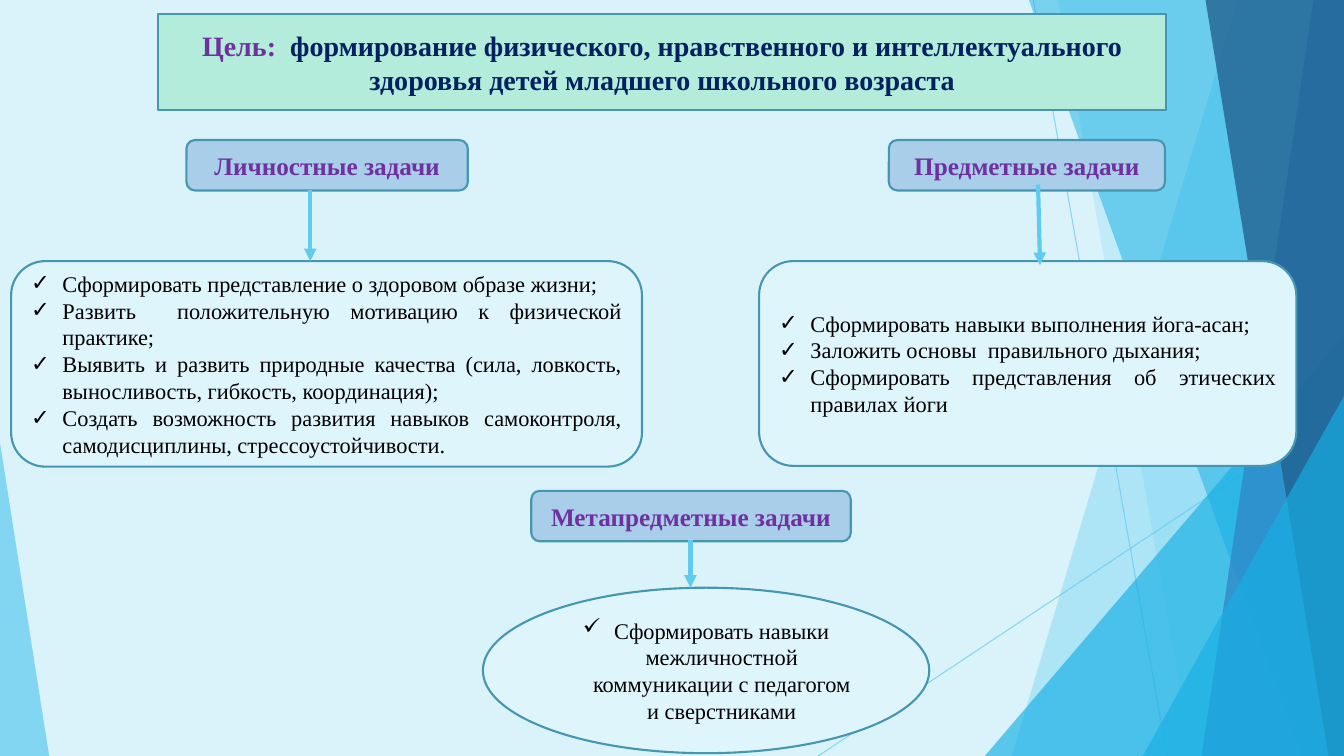
from dataclasses import dataclass
from typing import Optional

from lxml import etree
from pptx import Presentation
from pptx import util as u
from pptx.dml.color import RGBColor
from pptx.enum import shapes, text
from pptx.oxml.ns import qn

WIDTH, HEIGHT = 33.87, 19.05
FONT = "Times New Roman"
PURPLE, NAVY, BLACK, OUTLINE, SKY = "7030A0", "002060", "000000", "4696B1", "5FCBEF"
ROUNDED, OVAL = shapes.MSO_SHAPE.ROUNDED_RECTANGLE, shapes.MSO_SHAPE.OVAL
CENTER, JUSTIFY = text.PP_ALIGN.CENTER, text.PP_ALIGN.JUSTIFY
BULLET_INDENT = 0.79


@dataclass
class Facet:
    """Decorative polygon between a slanted side and a slide edge."""
    top_x: float
    bottom_x: float
    color: str
    opacity: int
    top_y: float = 0
    edge: float = WIDTH


@dataclass
class Line:
    start: tuple[float, float]
    end: tuple[float, float]


@dataclass
class Style:
    fill: str
    size: int
    color: str
    bold: bool = True
    bulleted: bool = False


@dataclass
class Box:
    area: tuple[float, float, float, float]
    style: Style
    lines: list[str]
    placeholder: Optional[int] = None
    alignment: text.PP_ALIGN = CENTER
    kind: shapes.MSO_SHAPE = ROUNDED


GOAL = Style("B3ECDA", 20, PURPLE)
HEADING = Style("A8CEEA", 18, PURPLE)
TASKS = Style("DFF5FC", 16, BLACK, bold=False, bulleted=True)

FACETS = [
    Facet(31.19, 25.5, SKY, 36),
    Facet(26.67, 30.05, SKY, 20),
    Facet(WIDTH, 24.82, "17B0E4", 66, top_y=8.46),
    Facet(25.93, 32.79, "17B0E4", 50),
    Facet(33.1, 30.28, "2E83C3", 70),
    Facet(30.38, 33.48, "226292", 80),
    Facet(WIDTH, 28.8, "17B0E4", 66, top_y=9.98),
    Facet(0, 1.24, SKY, 70, top_y=11.15, edge=0),
]
RAYS = [Line((26.04, 0), (29.41, HEIGHT)), Line((WIDTH, 10.24), (20.62, HEIGHT))]
ARROWS = [
    Line((7.82, 4.8), (7.82, 6.58)),
    Line((26.16, 4.65), (26.21, 6.68)),
    Line((17.4, 13.61), (17.4, 14.81)),
]
GOAL_BOX = Box((3.99, 0.36, 25.4, 2.41), GOAL, ["Цель:  "], 0)
GOAL_TEXT = ("формирование физического, нравственного и интеллектуального "
             "здоровья детей младшего школьного возраста")
BOXES = [
    Box((4.7, 3.53, 7.09, 1.27), HEADING, ["Личностные задачи"], 1),
    Box((13.39, 12.37, 8.05, 1.27), HEADING, ["Метапредметные задачи"]),
    Box((22.4, 3.53, 6.96, 1.27), HEADING, ["Предметные задачи"], 3),
    Box((19.13, 6.58, 13.54, 5.16), TASKS, [
        "Сформировать навыки выполнения йога-асан;",
        "Заложить основы  правильного дыхания;",
        "Сформировать представления об этических правилах йоги",
    ], 4, JUSTIFY),
    Box((12.17, 14.81, 11.25, 4.17), TASKS, [
        "Сформировать навыки межличностной коммуникации с педагогом и сверстниками",
    ], kind=OVAL),
    Box((0.28, 6.58, 15.9, 5.18), TASKS, [
        "Сформировать представление о здоровом образе жизни;",
        "Развить  положительную мотивацию к физической практике;",
        "Выявить и развить природные качества (сила, ловкость, выносливость, "
        "гибкость, координация);",
        "Создать возможность развития навыков самоконтроля, самодисциплины, "
        "стрессоустойчивости.",
    ], 2, JUSTIFY),
]


def paint(color_format, color: str) -> None:
    color_format.rgb = RGBColor.from_string(color)


def set_fill(fill, color: str) -> None:
    fill.solid()
    paint(fill.fore_color, color)


def set_opacity(shape, percent: int) -> None:
    for color in shape.element.spPr.iter(qn("a:srgbClr")):
        etree.SubElement(color, qn("a:alpha"), val=str(percent * 1000))


def draw_facet(slide, facet: Facet) -> None:
    corners = [(facet.top_x, facet.top_y), (facet.edge, facet.top_y),
               (facet.edge, HEIGHT), (facet.bottom_x, HEIGHT)]
    points = [(u.Cm(x), u.Cm(y)) for x, y in corners]
    builder = slide.shapes.build_freeform(*points[0])
    builder.add_line_segments(points[1:])
    shape = builder.convert_to_shape()
    shape.shadow.inherit = False
    set_fill(shape.fill, facet.color)
    shape.line.fill.background()
    set_opacity(shape, facet.opacity)


def draw_line(slide, line: Line, width: float):
    ends = [u.Cm(value) for value in line.start + line.end]
    connector = slide.shapes.add_connector(shapes.MSO_CONNECTOR.STRAIGHT, *ends)
    connector.line.width = u.Pt(width)
    set_fill(connector.line.fill, SKY)
    etree.SubElement(connector.element.spPr, qn("a:effectLst"))
    return connector


def draw_arrow(slide, line: Line) -> None:
    outline = draw_line(slide, line, 3).element.spPr.find(qn("a:ln"))
    etree.SubElement(outline, qn("a:tailEnd"), type="triangle")


def place_box(slide, box: Box):
    area = [u.Cm(value) for value in box.area]
    if box.placeholder is None:
        return slide.shapes.add_shape(box.kind, *area)
    shape = next(item for item in slide.placeholders
                 if item.placeholder_format.idx == box.placeholder)
    shape.left, shape.top, shape.width, shape.height = area
    geometry = etree.SubElement(shape.element.spPr, qn("a:prstGeom"), prst="roundRect")
    etree.SubElement(geometry, qn("a:avLst"))
    shape.element.getparent().append(shape.element)  # bring to front
    return shape


def format_run(run, style: Style, color: str) -> None:
    run.font.name = FONT
    run.font.size = u.Pt(style.size)
    run.font.bold = style.bold
    paint(run.font.color, color)


def format_paragraph(paragraph, box: Box) -> None:
    paragraph.alignment = box.alignment
    paragraph.line_spacing = 1.0
    paragraph.space_before = paragraph.space_after = u.Pt(0)
    properties = paragraph._p.get_or_add_pPr()
    indent = u.Cm(BULLET_INDENT) if box.style.bulleted else 0
    properties.set("marL", str(indent))
    properties.set("indent", str(-indent))
    if box.style.bulleted:
        etree.SubElement(properties, qn("a:buChar"), char="✓")
    else:
        etree.SubElement(properties, qn("a:buNone"))
    for run in paragraph.runs:
        format_run(run, box.style, box.style.color)


def draw_box(slide, box: Box):
    shape = place_box(slide, box)
    set_fill(shape.fill, box.style.fill)
    set_fill(shape.line.fill, OUTLINE)
    shape.line.width = u.Pt(1.5)
    shape.shadow.inherit = False
    frame = shape.text_frame
    frame.text = "\n".join(box.lines)
    frame.word_wrap = True
    frame.auto_size = text.MSO_AUTO_SIZE.NONE
    frame.vertical_anchor = text.MSO_ANCHOR.MIDDLE
    for paragraph in frame.paragraphs:
        format_paragraph(paragraph, box)
    return shape


def main() -> None:
    presentation = Presentation()
    presentation.slide_width, presentation.slide_height = u.Cm(WIDTH), u.Cm(HEIGHT)
    slide = presentation.slides.add_slide(
        presentation.slide_layouts.get_by_name("Comparison"))
    set_fill(slide.background.fill, "DAF3FB")

    # Background decoration
    for ray in RAYS:
        set_opacity(draw_line(slide, ray, 0.75), 70)
    for facet in FACETS:
        draw_facet(slide, facet)

    # Goal
    goal = draw_box(slide, GOAL_BOX)
    run = goal.text_frame.paragraphs[0].add_run()
    run.text = GOAL_TEXT
    format_run(run, GOAL, NAVY)

    # Headings and tasks
    for box in BOXES:
        draw_box(slide, box)
    for arrow in ARROWS:
        draw_arrow(slide, arrow)

    presentation.save("out.pptx")


if __name__ == "__main__":
    main()
